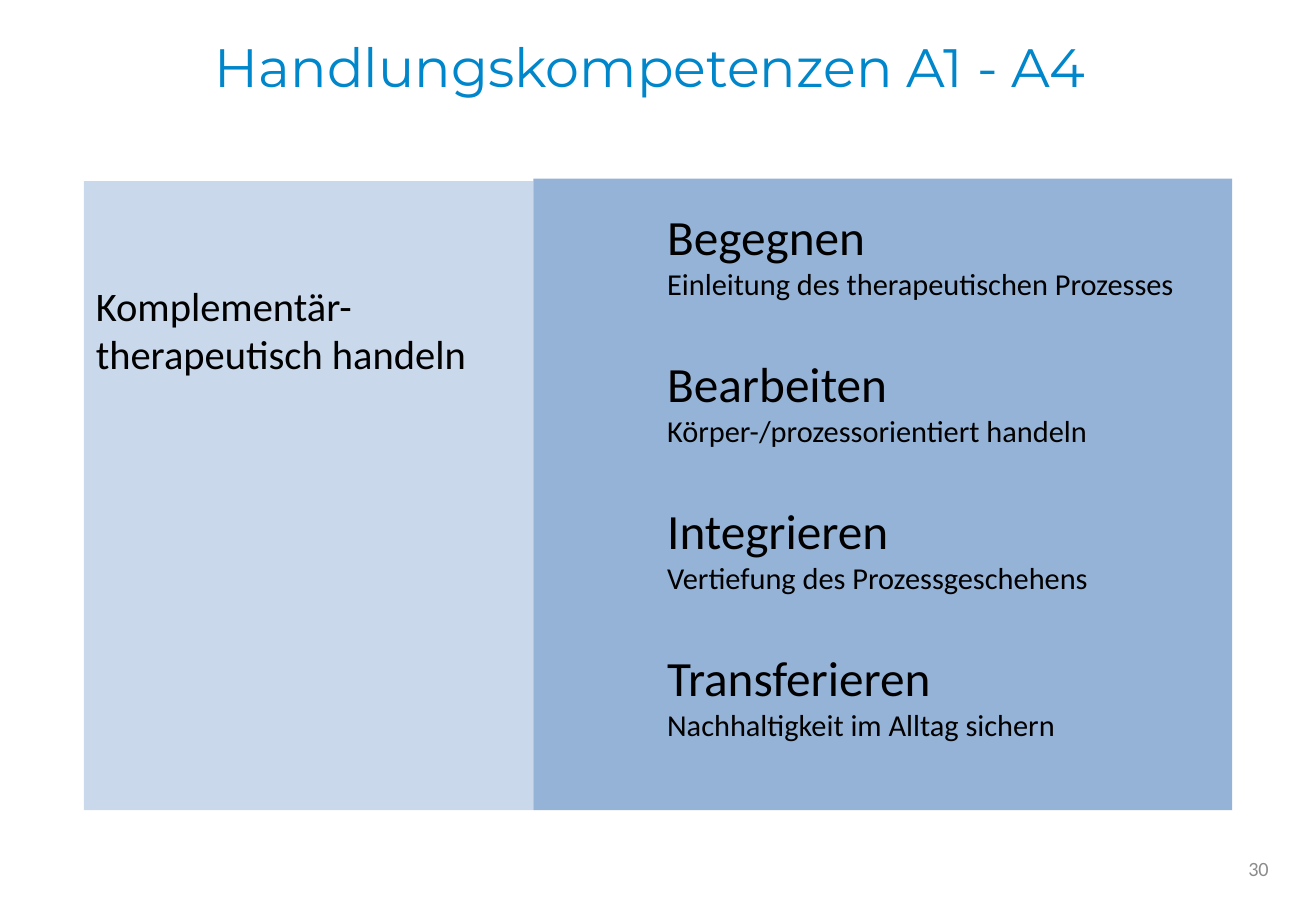
from dataclasses import dataclass

from lxml.etree import SubElement
from pptx import Presentation
from pptx.dml.color import RGBColor
from pptx.enum.shapes import MSO_SHAPE as Preset
from pptx.enum.text import MSO_ANCHOR as Anchor, PP_ALIGN as Align
from pptx.oxml.ns import qn
from pptx.shapes.autoshape import Shape
from pptx.slide import Slide
from pptx.util import Emu, Pt

EMU_PER_PX = 9144


@dataclass(frozen=True)
class TextStyle:
    font: str
    size: float
    color: str


@dataclass(frozen=True)
class Theme:
    panel: str = "95B3D7"
    title: TextStyle = TextStyle("Montserrat", 32, "0086CA")
    heading: TextStyle = TextStyle("Calibri", 29.2, "000000")
    area: TextStyle = TextStyle("Calibri", 24, "000000")
    detail: TextStyle = TextStyle("Calibri", 18, "000000")
    page: TextStyle = TextStyle("Calibri", 12, "8C8C8C")
    stage_gap: float = 30.5


@dataclass(frozen=True)
class Box:
    left: int
    top: int
    width: int
    height: int


@dataclass(frozen=True)
class Insets:
    left: int = 10
    top: int = 5
    right: int = 10
    bottom: int = 5


@dataclass(frozen=True)
class Line:
    text: str
    style: TextStyle
    space_before: float = 0


@dataclass(frozen=True)
class Stage:
    name: str
    detail: str


THEME = Theme()
STAGES = [
    Stage("Begegnen", "Einleitung des therapeutischen Prozesses"),
    Stage("Bearbeiten", "Körper-/prozessorientiert handeln"),
    Stage("Integrieren", "Vertiefung des Prozessgeschehens"),
    Stage("Transferieren", "Nachhaltigkeit im Alltag sichern"),
]


def px(value: int) -> Emu:
    return Emu(value * EMU_PER_PX)


def write_lines(shape: Shape, lines: list[Line], insets: Insets,
                align: Align = Align.LEFT, anchor: Anchor = Anchor.TOP) -> None:
    frame = shape.text_frame
    frame.word_wrap = True
    frame.vertical_anchor = anchor
    frame.margin_left, frame.margin_top = px(insets.left), px(insets.top)
    frame.margin_right, frame.margin_bottom = px(insets.right), px(insets.bottom)
    for index, line in enumerate(lines):
        paragraph = frame.add_paragraph() if index else frame.paragraphs[0]
        paragraph.alignment = align
        if line.space_before:
            paragraph.space_before = Pt(line.space_before)
        run = paragraph.add_run()
        run.text = line.text
        run.font.name = line.style.font
        run.font.size = Pt(line.style.size)
        run.font.color.rgb = RGBColor.from_string(line.style.color)


def add_panel(slide: Slide, box: Box, lines: list[Line], insets: Insets,
              opacity: int = 100) -> None:
    shape = slide.shapes.add_shape(Preset.RECTANGLE, px(box.left), px(box.top),
                                   px(box.width), px(box.height))
    shape.shadow.inherit = False
    shape.line.fill.background()
    shape.fill.solid()
    shape.fill.fore_color.rgb = RGBColor.from_string(THEME.panel)
    if opacity < 100:
        color = shape._element.spPr.find(qn("a:solidFill")).find(qn("a:srgbClr"))
        SubElement(color, qn("a:alpha")).set("val", str(opacity * 1000))
    write_lines(shape, lines, insets)


def add_label(slide: Slide, box: Box, line: Line, align: Align,
              insets: Insets = Insets()) -> None:
    shape = slide.shapes.add_textbox(px(box.left), px(box.top),
                                     px(box.width), px(box.height))
    write_lines(shape, [line], insets, align, Anchor.MIDDLE)


def stage_lines(stages: list[Stage]) -> list[Line]:
    lines: list[Line] = []
    for stage in stages:
        gap = THEME.stage_gap if lines else 0
        lines.append(Line(stage.name, THEME.heading, gap))
        lines.append(Line(stage.detail, THEME.detail))
    return lines


def main() -> None:
    presentation = Presentation()
    presentation.slide_width, presentation.slide_height = px(1083), px(750)
    slide = presentation.slides.add_slide(presentation.slide_layouts[6])
    add_panel(slide, Box(439, 147, 575, 520), stage_lines(STAGES),
              Insets(left=110, top=23))
    add_panel(slide, Box(69, 149, 370, 518),
              [Line("Komplementär-therapeutisch handeln", THEME.area)],
              Insets(top=82), opacity=50)
    add_label(slide, Box(801, 695, 253, 40), Line("30", THEME.page), Align.RIGHT)
    add_label(slide, Box(0, 0, 1083, 139),
              Line("Handlungskompetenzen A1 - A4", THEME.title),
              Align.CENTER, Insets(right=22, bottom=35))
    presentation.save("out.pptx")


if __name__ == "__main__":
    main()
